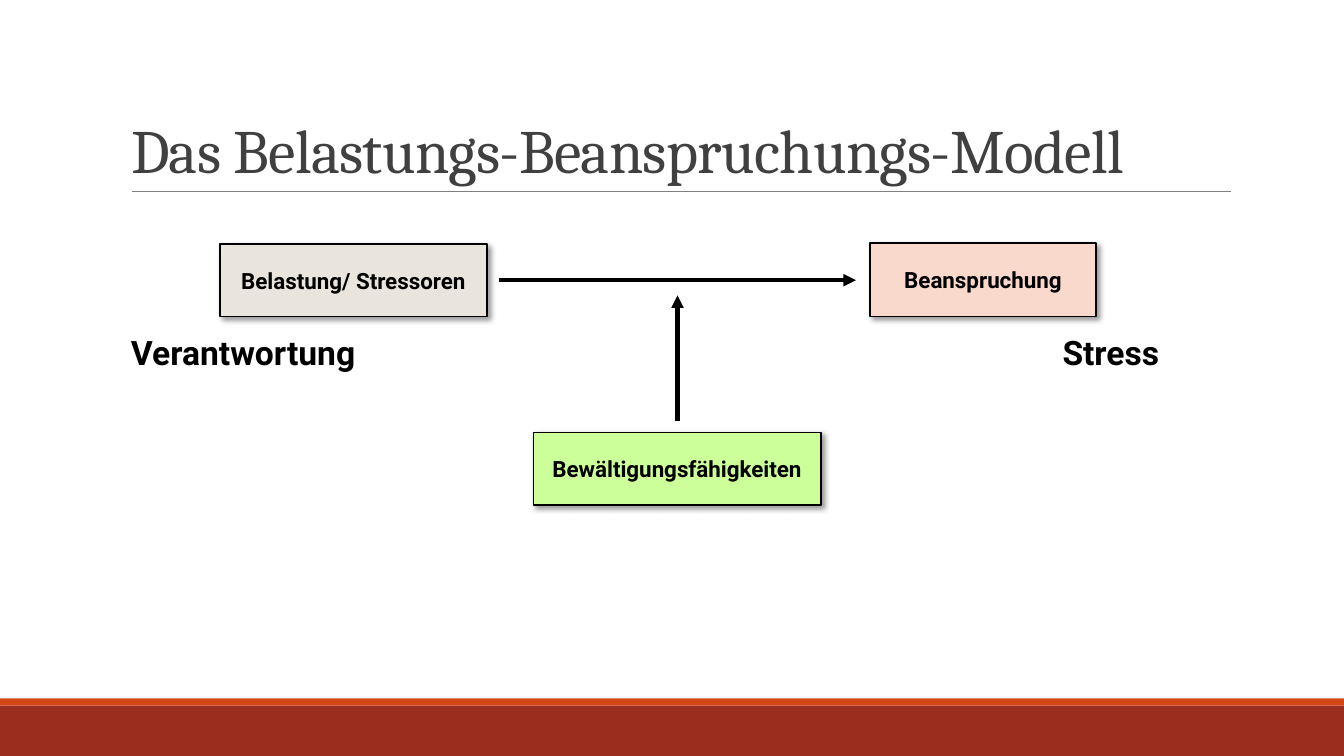
from dataclasses import dataclass

from lxml.etree import SubElement
from pptx import Presentation
from pptx.dml.color import RGBColor
from pptx.enum.shapes import MSO_CONNECTOR, MSO_SHAPE
from pptx.enum.text import MSO_ANCHOR, MSO_AUTO_SIZE, PP_ALIGN
from pptx.oxml.ns import qn
from pptx.util import Inches, Pt


@dataclass(frozen=True)
class Theme:
    heading_font: str = "Cambria"
    body_font: str = "Roboto"
    title_size: int = 44
    example_size: int = 24
    block_size: int = 16
    title: str = "404040"
    ink: str = "000000"
    rule: str = "808080"
    footer: str = "9B2D1F"
    footer_edge: str = "D34817"
    stressor: str = "E9E5DC"
    strain: str = "FAD9CD"
    coping: str = "CCFF99"


theme = Theme()


def style_text(paragraph, font_name, size, color, bold):
    font = paragraph.font
    font.name, font.size, font.bold = font_name, Pt(size), bold
    font.color.rgb = RGBColor.from_string(color)


def add_line(start, end, color, width, arrow=False):
    """Draw a shadowless line, with a triangle at its end if it is an arrow."""
    line = slide.shapes.add_connector(
        MSO_CONNECTOR.STRAIGHT, *map(Inches, start + end))
    line.line.color.rgb = RGBColor.from_string(color)
    line.line.width = Pt(width)
    properties = line.element.spPr
    if arrow:
        SubElement(properties.find(qn("a:ln")), qn("a:tailEnd"), type="triangle")
    SubElement(properties, qn("a:effectLst"))


presentation = Presentation()
presentation.slide_width, presentation.slide_height = Inches(13.33), Inches(7.5)
slide = presentation.slides.add_slide(presentation.slide_layouts[5])

# Footer bands and title rule
for top, height, color in [(7, 0.5, theme.footer), (6.93, 0.07, theme.footer_edge)]:
    band = slide.shapes.add_shape(
        MSO_SHAPE.RECTANGLE, 0, Inches(top), presentation.slide_width, Inches(height))
    band.shadow.inherit = False
    band.fill.solid()
    band.fill.fore_color.rgb = RGBColor.from_string(color)
    band.line.fill.background()
add_line((1.31, 1.9), (12.21, 1.9), theme.rule, 0.5)

# Title
title = slide.shapes.title
title.left, title.top = Inches(1.2), Inches(0.31)
title.width, title.height = Inches(11), Inches(1.59)
title.text_frame.text = "Das Belastungs-Beanspruchungs-Modell"
title.text_frame.vertical_anchor = MSO_ANCHOR.BOTTOM
title.text_frame.auto_size = MSO_AUTO_SIZE.NONE
heading = title.text_frame.paragraphs[0]
heading.alignment = PP_ALIGN.LEFT
heading.line_spacing = 0.85
style_text(heading, theme.heading_font, theme.title_size, theme.title, False)
heading.runs[0].font._element.set("spc", "-50")

# Model blocks
blocks = [
    ("Belastung/ Stressoren", 2.18, 2.42, 2.65, 0.72, theme.stressor),
    ("Beanspruchung", 8.63, 2.41, 2.24, 0.73, theme.strain),
    ("Bewältigungsfähigkeiten", 5.29, 4.29, 2.85, 0.72, theme.coping),
]
for label, left, top, width, height, color in blocks:
    block = slide.shapes.add_shape(
        MSO_SHAPE.RECTANGLE, *map(Inches, (left, top, width, height)))
    block.fill.solid()
    block.fill.fore_color.rgb = RGBColor.from_string(color)
    block.line.color.rgb = RGBColor.from_string(theme.ink)
    block.line.width = Pt(1.25)
    block.shadow.inherit = False
    shadow = SubElement(
        block.element.spPr.find(qn("a:effectLst")), qn("a:outerShdw"),
        blurRad=str(Pt(4)), dist=str(Pt(3)), dir=str(45 * 60000),
        algn="tl", rotWithShape="0")
    shadow_color = SubElement(shadow, qn("a:srgbClr"), val=theme.ink)
    SubElement(shadow_color, qn("a:alpha"), val="40000")
    block.text_frame.text = label
    block.text_frame.word_wrap = True
    block.text_frame.vertical_anchor = MSO_ANCHOR.MIDDLE
    caption = block.text_frame.paragraphs[0]
    caption.alignment = PP_ALIGN.CENTER
    style_text(caption, theme.body_font, theme.block_size, theme.ink, True)

# Stressors lead to strain, moderated by coping skills
add_line((4.95, 2.78), (8.49, 2.78), theme.ink, 3, arrow=True)
add_line((6.72, 4.18), (6.72, 2.93), theme.ink, 3, arrow=True)

# Examples
for example, left, width in [("Verantwortung", 1.2, 2.89), ("Stress", 10.44, 1.37)]:
    box = slide.shapes.add_textbox(*map(Inches, (left, 3.24, width, 0.5)))
    box.text_frame.word_wrap = True
    box.text_frame.auto_size = MSO_AUTO_SIZE.SHAPE_TO_FIT_TEXT
    box.text_frame.text = example
    style_text(box.text_frame.paragraphs[0], theme.body_font,
               theme.example_size, theme.ink, True)

presentation.save("out.pptx")
